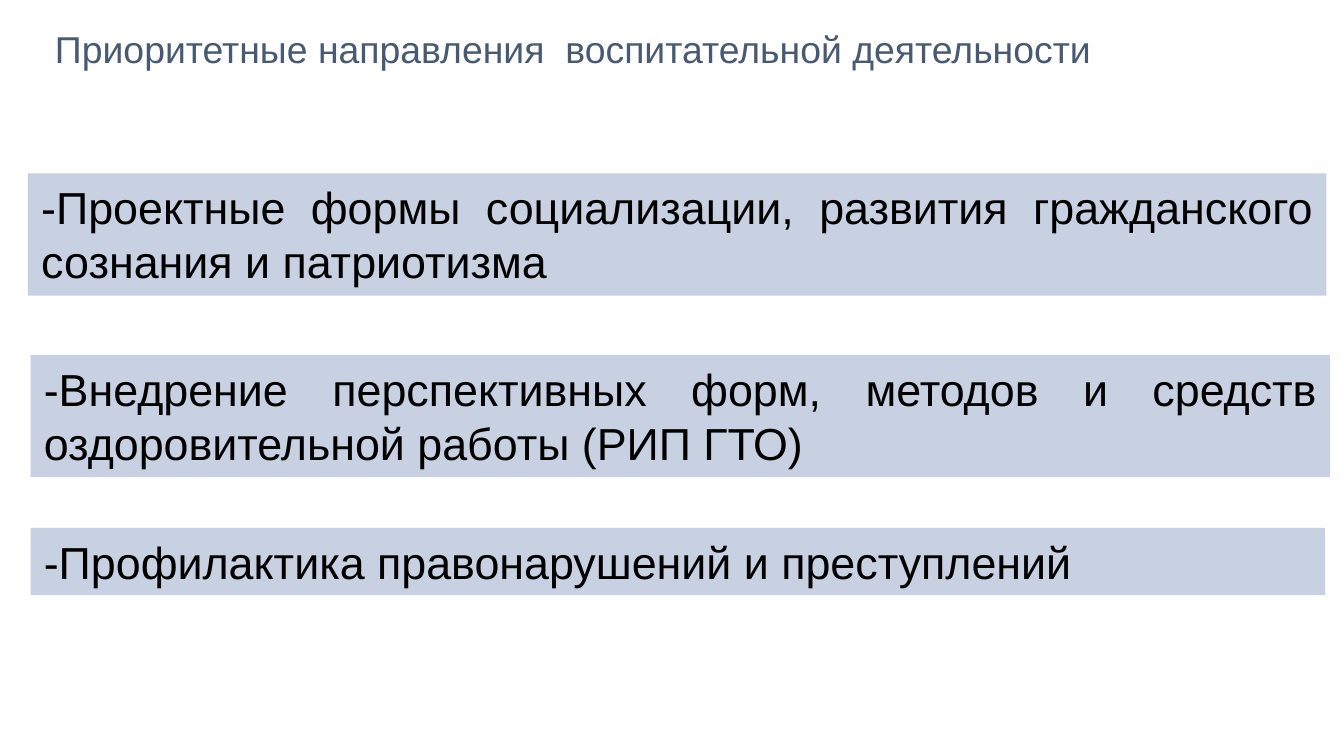
from pptx import Presentation
from pptx import util as u
from pptx.dml.color import RGBColor
from pptx.enum import shapes, text

HUES = {"title": "485A73", "band": "C8D1E2", "ink": "000000"}
TITLE = "Приоритетные направления  воспитательной деятельности"
GOALS = [
    ("-Проектные формы социализации, развития гражданского сознания и патриотизма",
     (0.53, 3.28, 24.54, 2.31)),
    ("-Внедрение перспективных форм, методов и средств оздоровительной работы (РИП ГТО)",
     (0.58, 6.71, 24.56, 2.31)),
    ("-Профилактика правонарушений и преступлений",
     (0.58, 9.98, 24.46, 1.27)),
]


class Deck:
    """Holds the style and the current slide."""

    def __init__(self, wide, high):
        self.prs = Presentation()
        self.prs.slide_width, self.prs.slide_height = u.Cm(wide), u.Cm(high)
        self.slide = self.prs.slides.add_slide(self.prs.slide_layouts[6])
        self.frame = {"word_wrap": True, "vertical_anchor": text.MSO_ANCHOR.TOP}

    def apply(self, item, form):
        for key, value in form.items():
            setattr(item, key, value)

    def label(self, shape, words, size, hue, form):
        self.apply(shape.text_frame, self.frame)
        para = shape.text_frame.paragraphs[0]
        para.text = words
        self.apply(para, form)
        self.apply(para.font, {"name": "Arial", "size": u.Pt(size)})
        para.font.color.rgb = RGBColor.from_string(HUES[hue])

    def title(self, words, box):
        shape = self.slide.shapes.add_textbox(*map(u.Cm, box))
        self.label(shape, words, 20, "title", {"line_spacing": 0.9})

    def band(self, words, box):
        shape = self.slide.shapes.add_shape(
            shapes.MSO_SHAPE.RECTANGLE, *map(u.Cm, box))
        shape.shadow.inherit = False
        shape.fill.solid()
        shape.fill.fore_color.rgb = RGBColor.from_string(HUES["band"])
        shape.line.fill.background()
        self.label(shape, words, 24, "ink", {"alignment": text.PP_ALIGN.JUSTIFY})


def main():
    deck = Deck(25.4, 14.29)
    deck.title(TITLE, (0.79, 0.46, 20.12, 3))
    for words, box in GOALS:
        deck.band(words, box)
    deck.prs.save("out.pptx")


if __name__ == "__main__":
    main()
